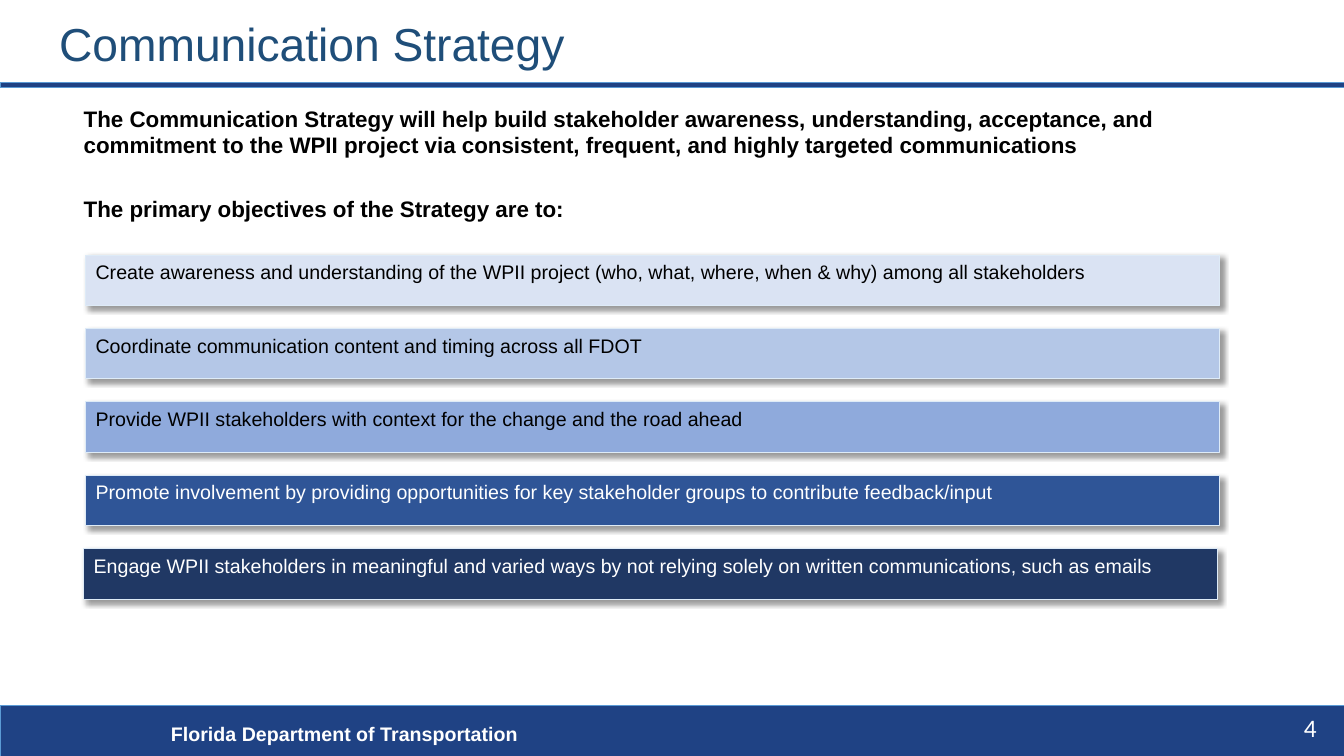
"""Build the Communication Strategy slide."""
from dataclasses import dataclass

from lxml import etree
from pptx import Presentation
from pptx.dml.color import RGBColor
from pptx.enum.shapes import MSO_SHAPE
from pptx.enum.text import MSO_ANCHOR, PP_ALIGN
from pptx.oxml.ns import qn
from pptx.shapes.autoshape import Shape
from pptx.slide import Slide
from pptx.util import Cm, Pt

RECTANGLE = MSO_SHAPE.RECTANGLE
TOP = MSO_ANCHOR.TOP
MIDDLE = MSO_ANCHOR.MIDDLE
LEFT = PP_ALIGN.LEFT

BLACK = RGBColor(0x00, 0x00, 0x00)
WHITE = RGBColor(0xFF, 0xFF, 0xFF)
NAVY = RGBColor(0x1F, 0x42, 0x84)
SKY = RGBColor(0x5B, 0x9B, 0xD5)
TITLE_BLUE = RGBColor(0x1F, 0x4E, 0x79)
BAR_EDGE = RGBColor(0xDE, 0xEB, 0xF7)
BAR_1 = RGBColor(0xDA, 0xE3, 0xF3)
BAR_2 = RGBColor(0xB4, 0xC7, 0xE7)
BAR_3 = RGBColor(0x8F, 0xAA, 0xDC)
BAR_4 = RGBColor(0x2F, 0x55, 0x97)
BAR_5 = RGBColor(0x20, 0x38, 0x64)

SLIDE_WIDTH, SLIDE_HEIGHT = 33.87, 19.05
BAR_TOP, BAR_PITCH = 6.43, 1.85
BAR_WIDTH, BAR_HEIGHT = 28.58, 1.27


@dataclass(frozen=True)
class Box:
    left: float
    top: float
    width: float
    height: float


@dataclass(frozen=True)
class TextStyle:
    size: float
    color: RGBColor
    bold: bool = False
    font: str = "Arial"


@dataclass(frozen=True)
class Objective:
    text: str
    fill: RGBColor
    color: RGBColor
    left: float = 2.16


OBJECTIVES = [
    Objective("Create awareness and understanding of the WPII project (who, what, where, "
              "when & why) among all stakeholders", BAR_1, BLACK),
    Objective("Coordinate communication content and timing across all FDOT", BAR_2, BLACK),
    Objective("Provide WPII stakeholders with context for the change and the road ahead",
              BAR_3, BLACK),
    Objective("Promote involvement by providing opportunities for key stakeholder groups to "
              "contribute feedback/input", BAR_4, WHITE),
    Objective("Engage WPII stakeholders in meaningful and varied ways by not relying solely on "
              "written communications, such as emails", BAR_5, WHITE, left=2.11),
]
INTRODUCTION = [
    "The Communication Strategy will help build stakeholder awareness, understanding, "
    "acceptance, and commitment to the WPII project via consistent, frequent, and highly "
    "targeted communications",
    "The primary objectives of the Strategy are to:",
]


def write_text(shape: Shape, texts: list[str], style: TextStyle, gap: float = 0,
               line_spacing: float = 1.0) -> None:
    """Write one paragraph per text, with a gap in points between them."""
    frame = shape.text_frame
    frame.word_wrap = True
    for index, text in enumerate(texts):
        paragraph = frame.add_paragraph() if index else frame.paragraphs[0]
        paragraph.alignment = LEFT
        paragraph.line_spacing = line_spacing
        if index:
            paragraph.space_before = Pt(gap)
        run = paragraph.add_run()
        run.text = text
        run.font.name = style.font
        run.font.size = Pt(style.size)
        run.font.bold = style.bold
        run.font.color.rgb = style.color


def add_text(slide: Slide, box: Box, text: str, style: TextStyle) -> Shape:
    """Add a text box holding a single paragraph."""
    shape = add_text_box(slide, box)
    write_text(shape, [text], style)
    return shape


def add_text_box(slide: Slide, box: Box) -> Shape:
    """Add an empty text box."""
    return slide.shapes.add_textbox(Cm(box.left), Cm(box.top), Cm(box.width), Cm(box.height))


def add_rectangle(slide: Slide, box: Box, fill: RGBColor, edge: RGBColor,
                  edge_width: float) -> Shape:
    """Add a flat filled rectangle with a thin edge."""
    shape = slide.shapes.add_shape(RECTANGLE, Cm(box.left), Cm(box.top),
                                   Cm(box.width), Cm(box.height))
    shape.shadow.inherit = False
    shape.fill.solid()
    shape.fill.fore_color.rgb = fill
    shape.line.color.rgb = edge
    shape.line.width = Pt(edge_width)
    return shape


def add_shadow(shape: Shape) -> None:
    """Give the shape a soft shadow to the lower right."""
    effects = shape.element.spPr.find(qn("a:effectLst"))
    shadow = etree.SubElement(effects, qn("a:outerShdw"), blurRad=str(Pt(4)), dist=str(Pt(3)),
                              dir="2700000", algn="tl", rotWithShape="0")
    color = etree.SubElement(shadow, qn("a:srgbClr"), val=str(BLACK))
    etree.SubElement(color, qn("a:alpha"), val="40000")


def add_objective(slide: Slide, objective: Objective, top: float) -> None:
    """Add one objective bar."""
    box = Box(objective.left, top, BAR_WIDTH, BAR_HEIGHT)
    bar = add_rectangle(slide, box, objective.fill, BAR_EDGE, 0.75)
    add_shadow(bar)
    bar.text_frame.vertical_anchor = TOP
    write_text(bar, [objective.text], TextStyle(14, objective.color))


def add_introduction(slide: Slide) -> None:
    """Add the bold lead-in above the objectives."""
    shape = add_text_box(slide, Box(2.11, 2.64, 28.35, 3.2))
    frame = shape.text_frame
    frame.margin_left = frame.margin_top = frame.margin_right = frame.margin_bottom = 0
    write_text(shape, INTRODUCTION, TextStyle(16, BLACK, bold=True), gap=26.5)


def main() -> None:
    """Build and save the presentation."""
    presentation = Presentation()
    presentation.slide_width = Cm(SLIDE_WIDTH)
    presentation.slide_height = Cm(SLIDE_HEIGHT)
    slide = presentation.slides.add_slide(presentation.slide_layouts[6])

    add_rectangle(slide, Box(0, 17.78, SLIDE_WIDTH, 1.27), NAVY, SKY, 0.5)
    add_text(slide, Box(4.06, 18.06, 20.27, 0.86), "Florida Department of Transportation",
             TextStyle(14, WHITE, bold=True))
    add_rectangle(slide, Box(0, 2.08, SLIDE_WIDTH, 0.13), NAVY, SKY, 0.5)

    title = add_text_box(slide, Box(1.24, 0.25, 29.21, 1.83))
    title.text_frame.vertical_anchor = MIDDLE
    write_text(title, ["Communication Strategy"], TextStyle(33, TITLE_BLUE), line_spacing=0.9)

    for index, objective in enumerate(OBJECTIVES):
        add_objective(slide, objective, BAR_TOP + index * BAR_PITCH)
    add_introduction(slide)
    add_text(slide, Box(32.61, 17.83, 1, 1.02), "4", TextStyle(18, WHITE, font="Calibri"))

    presentation.save("out.pptx")


if __name__ == "__main__":
    main()
